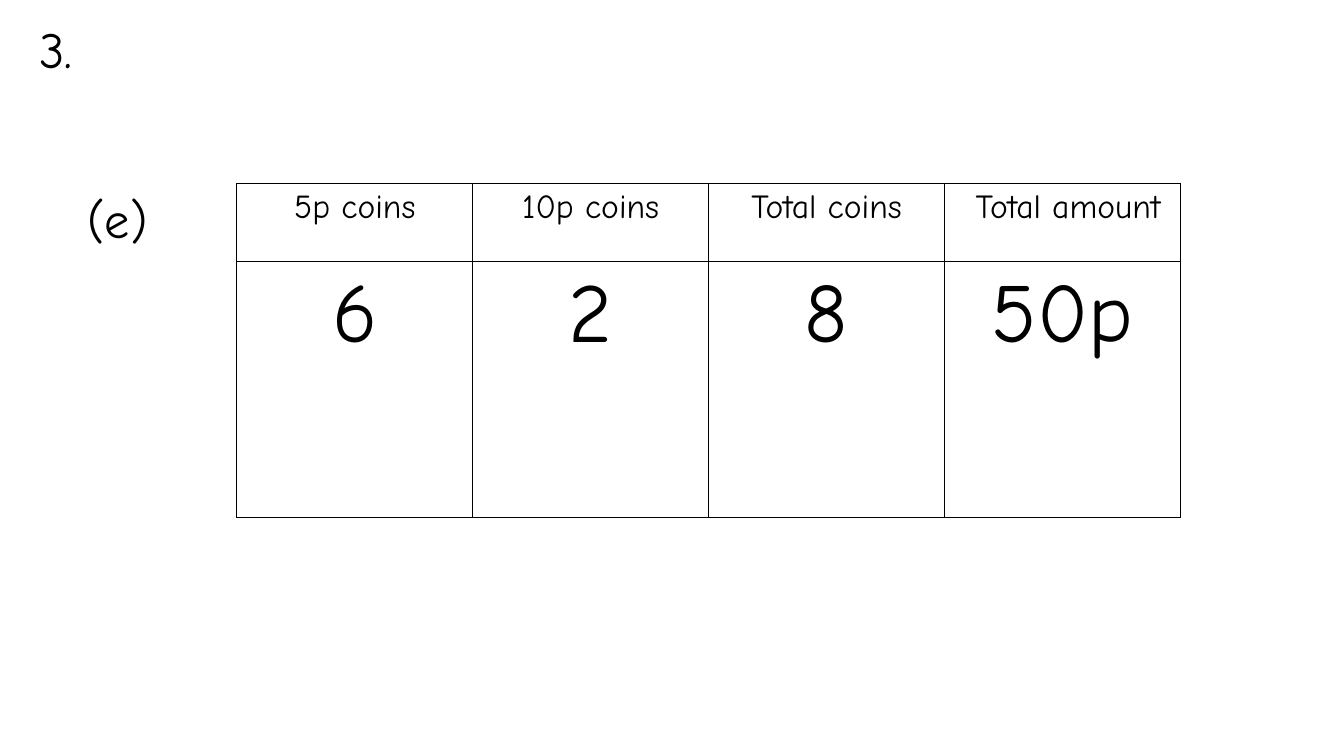
"""Build a slide with a coin-counting table for question 3 (e)."""
from lxml import etree
from pptx import Presentation
from pptx import util as u
from pptx.dml.color import RGBColor
from pptx.enum import text
from pptx.oxml import ns

BLACK = RGBColor(0, 0, 0)
FONT = "Comic Neue"
BORDER_WIDTH = u.Pt(1)


def add_run(paragraph, words, size):
    run = paragraph.add_run()
    run.text = words
    run.font.name = FONT
    run.font.size = u.Pt(size)
    run.font.color.rgb = BLACK


def add_border(cell, side, position):
    line = etree.Element(ns.qn(f"a:{side}"), w=str(BORDER_WIDTH))
    fill = etree.SubElement(line, ns.qn("a:solidFill"))
    etree.SubElement(fill, ns.qn("a:srgbClr"), val=str(BLACK))
    cell._tc.get_or_add_tcPr().insert(position, line)


presentation = Presentation()
presentation.slide_width = u.Pt(960)
presentation.slide_height = u.Pt(540)
slide = presentation.slides.add_slide(presentation.slide_layouts[6])

labels = [("3.", 20.9, 9.4, 64), ("(e)", 55.4, 131, 71.3)]
for words, left, top, width in labels:
    box = slide.shapes.add_textbox(u.Pt(left), u.Pt(top), u.Pt(width), u.Pt(51))
    box.text_frame.word_wrap = True
    box.text_frame.auto_size = text.MSO_AUTO_SIZE.SHAPE_TO_FIT_TEXT
    add_run(box.text_frame.paragraphs[0], words, 36)

rows = [
    (["5p coins", "10p coins", "Total coins", " Total amount"], 24, 56),
    (["6", "2", "8", "50p"], 60, 182.5),
]
frame = slide.shapes.add_table(2, 4, u.Pt(169.2), u.Pt(131), u.Pt(674), u.Pt(238.5))
table = frame.table
table.first_row = False
table.horz_banding = False
for column in table.columns:
    column.width = u.Pt(168.5)

for row_index, (values, size, height) in enumerate(rows):
    table.rows[row_index].height = u.Pt(height)
    for column_index, value in enumerate(values):
        cell = table.cell(row_index, column_index)
        cell.fill.background()
        for position, side in enumerate(["lnL", "lnR", "lnT", "lnB"]):
            add_border(cell, side, position)
        paragraph = cell.text_frame.paragraphs[0]
        paragraph.alignment = text.PP_ALIGN.CENTER
        add_run(paragraph, value, size)

presentation.save("out.pptx")
